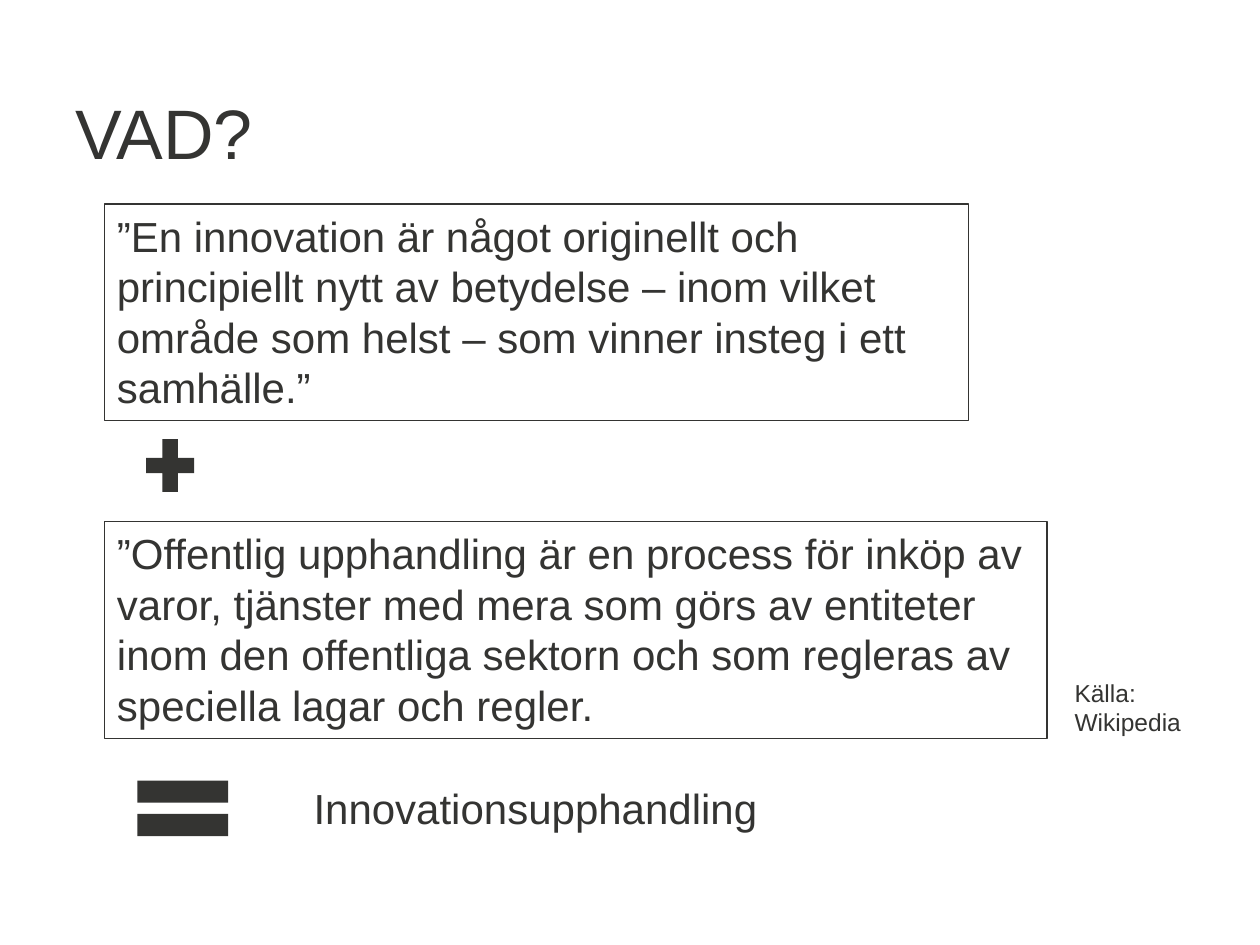
from pptx import Presentation
from pptx.dml.color import RGBColor
from pptx.enum.shapes import MSO_SHAPE as Shape
from pptx.enum.text import MSO_ANCHOR as Anchor, MSO_AUTO_SIZE as AutoSize, PP_ALIGN as Align
from pptx.util import Inches, Pt

INK = RGBColor(0x34, 0x34, 0x32)
PAPER = RGBColor(0xFF, 0xFF, 0xFF)

deck = Presentation()
deck.slide_width, deck.slide_height = Inches(10), Inches(7.5)
page = deck.slides.add_slide(deck.slide_layouts[6])

# Grid: 100 columns and 75 rows on the slide
COL = deck.slide_width / 100
ROW = deck.slide_height / 75


def place(left, top, width, height):
    return int(left * COL), int(top * ROW), int(width * COL), int(height * ROW)


def add_text(text, area, size=24, framed=False):
    if framed:
        box = page.shapes.add_shape(Shape.RECTANGLE, *place(*area))
        box.shadow.inherit = False
        box.fill.solid()
        box.fill.fore_color.rgb = PAPER
        box.line.color.rgb = INK
        box.line.width = Pt(0.75)
    else:
        box = page.shapes.add_textbox(*place(*area))
    frame = box.text_frame
    frame.word_wrap = True
    frame.auto_size = AutoSize.SHAPE_TO_FIT_TEXT
    frame.vertical_anchor = Anchor.TOP
    para = frame.paragraphs[0]
    para.alignment = Align.LEFT
    span = para.add_run()
    span.text = text
    span.font.name = "Arial"
    span.font.size = Pt(size)
    span.font.color.rgb = INK


# Title
add_text("VAD?", (5, 6.6, 18.9, 7.7), size=40)

# The two framed definitions
QUOTE_LEFT, QUOTE_HEIGHT = 8.3, 17.2
quotes = [
    ("”En innovation är något originellt och principiellt nytt av betydelse – "
     "inom vilket område som helst – som vinner insteg i ett samhälle.”", 16.2, 68.6),
    ("”Offentlig upphandling är en process för inköp av varor, tjänster med mera "
     "som görs av entiteter inom den offentliga sektorn och som regleras av "
     "speciella lagar och regler.", 41.4, 74.8),
]
for quote, top, width in quotes:
    add_text(quote, (QUOTE_LEFT, top, width, QUOTE_HEIGHT), framed=True)

# Plus and equals signs
signs = [
    (Shape.MATH_PLUS, (10.9, 34.1, 5.2, 5.7)),
    (Shape.MATH_EQUAL, (9.6, 60.4, 9.8, 7.5)),
]
for kind, area in signs:
    sign = page.shapes.add_shape(kind, *place(*area))
    sign.shadow.inherit = False
    sign.fill.solid()
    sign.fill.fore_color.rgb = INK
    sign.line.fill.background()

# Result and source
add_text("Innovationsupphandling", (23.9, 61.6, 40.2, 5))
add_text("Källa: Wikipedia", (84.3, 53.3, 15.7, 5.7), size=14)

deck.save("out.pptx")
